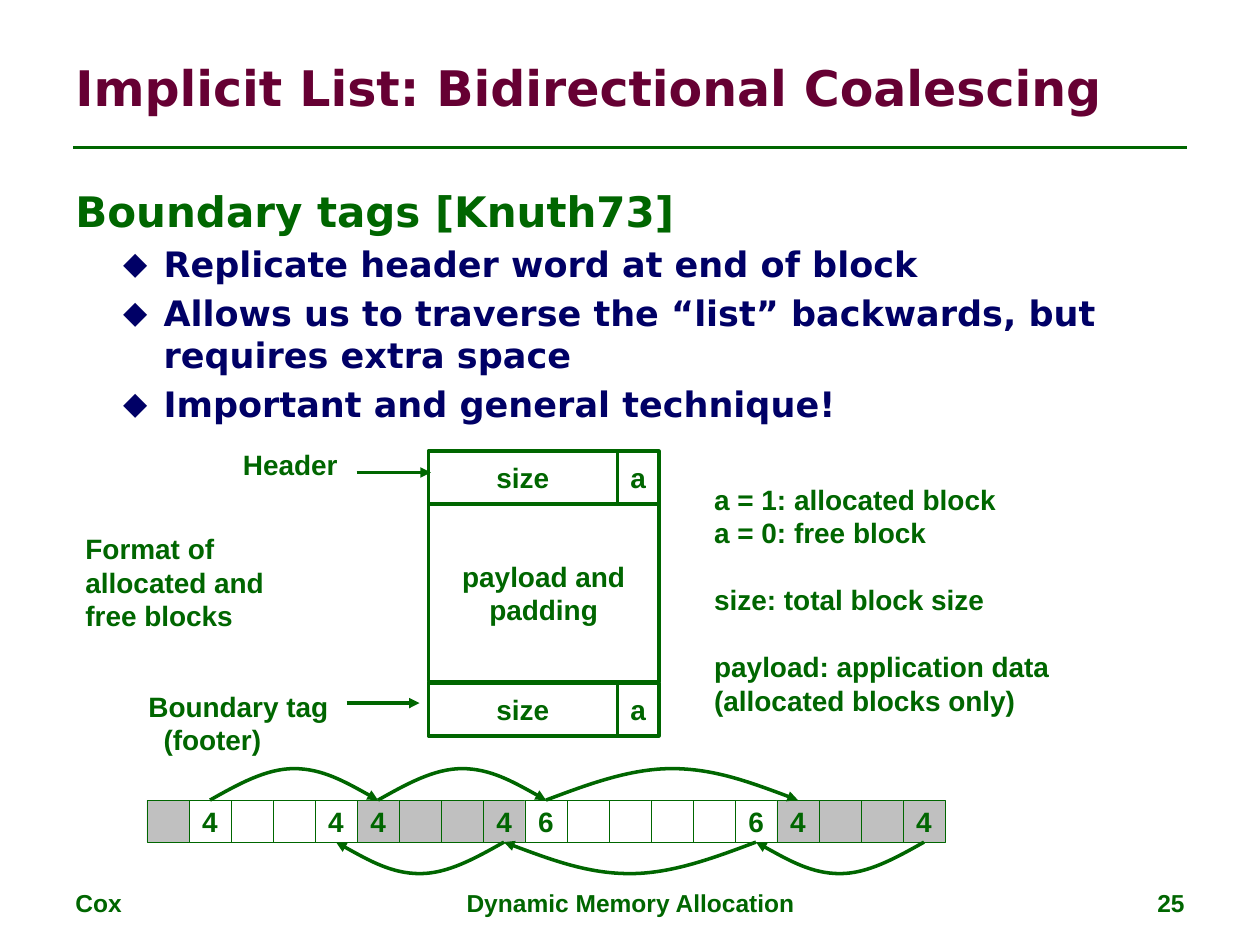
import pptx
import pptx.util
import pptx.dml.color
import pptx.enum.shapes
import pptx.enum.text
import pptx.oxml.ns
import lxml.etree

Inches, Pt = pptx.util.Inches, pptx.util.Pt
RGB = pptx.dml.color.RGBColor.from_string
ALIGN, ANCHOR = pptx.enum.text.PP_ALIGN, pptx.enum.text.MSO_ANCHOR
KIND, LINK = pptx.enum.shapes.MSO_SHAPE, pptx.enum.shapes.MSO_CONNECTOR
qn, child = pptx.oxml.ns.qn, lxml.etree.SubElement

theme = {
    "green": RGB("006600"), "wine": RGB("660033"), "navy": RGB("000066"),
    "white": RGB("FFFFFF"), "gray": RGB("C0C0C0"),
    "thick": Pt(2), "rule": Pt(1.5), "thin": Pt(0.25),
}
styles = {
    "title": {"name": "DejaVu Sans", "size": Pt(28), "color": theme["wine"]},
    "head": {"name": "DejaVu Sans", "size": Pt(24), "color": theme["green"]},
    "point": {"name": "DejaVu Sans", "size": Pt(20), "color": theme["navy"]},
    "label": {"name": "Arial", "size": Pt(16), "color": theme["green"]},
    "foot": {"name": "Arial", "size": Pt(14), "color": theme["green"]},
}


def write(shape, lines, style, align=ALIGN.LEFT, **frame):
    """Put one paragraph per line into the shape and return the paragraphs."""
    text = shape.text_frame
    for key, value in frame.items():
        setattr(text, key, value)
    text.text = "\n".join(lines)
    for par in text.paragraphs:
        par.alignment = align
        for run in par.runs:
            run.font.bold = True
            for key, value in styles[style].items():
                if key == "color":
                    run.font.color.rgb = value
                else:
                    setattr(run.font, key, value)
    return text.paragraphs


def stroke(shape, width, arrow=True):
    """Draw the line in green, with no shadow and an optional arrowhead."""
    shape.line.color.rgb = theme["green"]
    shape.line.width = width
    if arrow:
        child(shape.line._get_or_add_ln(), qn("a:tailEnd"), type="triangle")
    child(shape._element.spPr, qn("a:effectLst"))


deck = pptx.Presentation()
deck.slide_width, deck.slide_height = Inches(10), Inches(7.5)
slide = deck.slides.add_slide(deck.slide_layouts[6])
shapes = slide.shapes

# Title and footer
bars = [
    (0.5, 0.3, 9, 0.78, "Implicit List: Bidirectional Coalescing", "title", ALIGN.LEFT, ANCHOR.MIDDLE),
    (0.5, 7, 2.33, 0.35, "Cox", "foot", ALIGN.LEFT, ANCHOR.TOP),
    (3.42, 7, 3.17, 0.35, "Dynamic Memory Allocation", "foot", ALIGN.CENTER, ANCHOR.TOP),
    (7.17, 7, 2.33, 0.35, "25", "foot", ALIGN.RIGHT, ANCHOR.TOP),
]
for *place, words, style, align, anchor in bars:
    box = shapes.add_textbox(*map(Inches, place))
    write(box, [words], style, align, word_wrap=True, vertical_anchor=anchor)

# Body
body = shapes.add_textbox(Inches(0.5), Inches(1.42), Inches(9), Inches(5.28))
head, *points = write(body, [
    "Boundary tags [Knuth73]",
    "Replicate header word at end of block",
    "Allows us to traverse the “list” backwards, but requires extra space",
    "Important and general technique!",
], "point", word_wrap=True)
head.space_before = Pt(5)
head.runs[0].font.size = styles["head"]["size"]
head.runs[0].font.color.rgb = styles["head"]["color"]
for par in points:
    par.level = 1
    par.space_before = Pt(4)
    props = par._p.get_or_add_pPr()
    props.set("marL", str(Inches(0.7)))
    props.set("indent", str(Inches(-0.32)))
    child(props, qn("a:buSzPct"), val="90000")
    child(props, qn("a:buFont"), typeface=styles["point"]["name"])
    child(props, qn("a:buChar"), char="◆")

# Labels around the block
notes = [
    (0.58, 4.17, 1.62, 0.9, ["Format of", "allocated and", "free blocks"]),
    (5.57, 3.78, 2.87, 2.24, [
        "a = 1: allocated block", "a = 0: free block", "size: total block size",
        "payload: application data", "(allocated blocks only)"]),
    (1.08, 5.42, 1.63, 0.64, ["Boundary tag", "(footer)"]),
    (1.83, 3.5, 0.95, 0.37, ["Header"]),
]
for *place, lines in notes:
    box = shapes.add_textbox(*map(Inches, place))
    for par in write(box, lines, "label", word_wrap=False):
        if par.text.startswith(("size:", "payload:")):
            par.space_before = Pt(19)
        if par.text == "(footer)":
            par._p.get_or_add_pPr().set("marL", str(Inches(0.12)))

# Block layout, then the row of words in memory
boxes = [(3.4, 4, 1.83, 1.41, ["payload and", "padding"], "white", "thick")]
for top in (3.58, 5.42):
    boxes.append((3.4, top, 1.5, 0.42, ["size"], "white", "thick"))
    boxes.append((4.9, top, 0.33, 0.42, ["a"], "white", "thick"))

left, top, cell = 3.5 / 3, 6.35, 1 / 3
boxes.append((left, top, cell, cell, [], "gray", "thin"))
starts, ends = [], []
x = left + cell
for count, fill in [(4, "white"), (4, "gray"), (6, "white"), (4, "gray")]:
    starts.append(x + cell / 2)
    for i in range(count):
        lines = [str(count)] if i in (0, count - 1) else []
        boxes.append((x, top, cell, cell, lines, fill, "thin"))
        x += cell
    ends.append(x - cell / 2)

for *place, lines, fill, width in boxes:
    box = shapes.add_shape(KIND.RECTANGLE, *map(Inches, place))
    box.fill.solid()
    box.fill.fore_color.rgb = theme[fill]
    stroke(box, theme[width], arrow=False)
    if lines:
        write(box, lines, "label", ALIGN.CENTER, word_wrap=False,
              vertical_anchor=ANCHOR.MIDDLE)

# Rule and straight arrows
for x1, x2, y, width, arrow in [
    (0.58, 9.42, 1.17, "rule", False),
    (2.83, 3.42, 3.75, "thick", True),
    (2.75, 3.33, 5.58, "thick", True),
]:
    line = shapes.add_connector(LINK.STRAIGHT, *map(Inches, (x1, y, x2, y)))
    stroke(line, theme[width], arrow)

# Curved arrows: forward above the row, backward below it
hops = [(a, b, top, -0.25) for a, b in zip(starts, starts[1:])]
hops += [(b, a, top + cell, 0.25) for a, b in zip(ends, ends[1:])]
curve = [(1 / 6, 0.5), (1 / 3, 1), (1 / 2, 1), (2 / 3, 1), (5 / 6, 0.5), (1, 0)]
for a, b, y, rise in hops:
    pen = shapes.build_freeform(Inches(a), Inches(y))
    pen.add_line_segments(
        [(Inches(a + (b - a) * s), Inches(y + rise * t)) for s, t in curve], close=False)
    arc = pen.convert_to_shape()
    arc.fill.background()
    stroke(arc, theme["thick"])
    # Turn each three line points into one Bezier segment
    track = arc._element.find(".//" + qn("a:path"))
    legs = track.findall(qn("a:lnTo"))
    for i in range(0, len(legs), 3):
        bend = child(track, qn("a:cubicBezTo"))
        for leg in legs[i:i + 3]:
            bend.append(leg[0])
            track.remove(leg)

deck.save("out.pptx")
